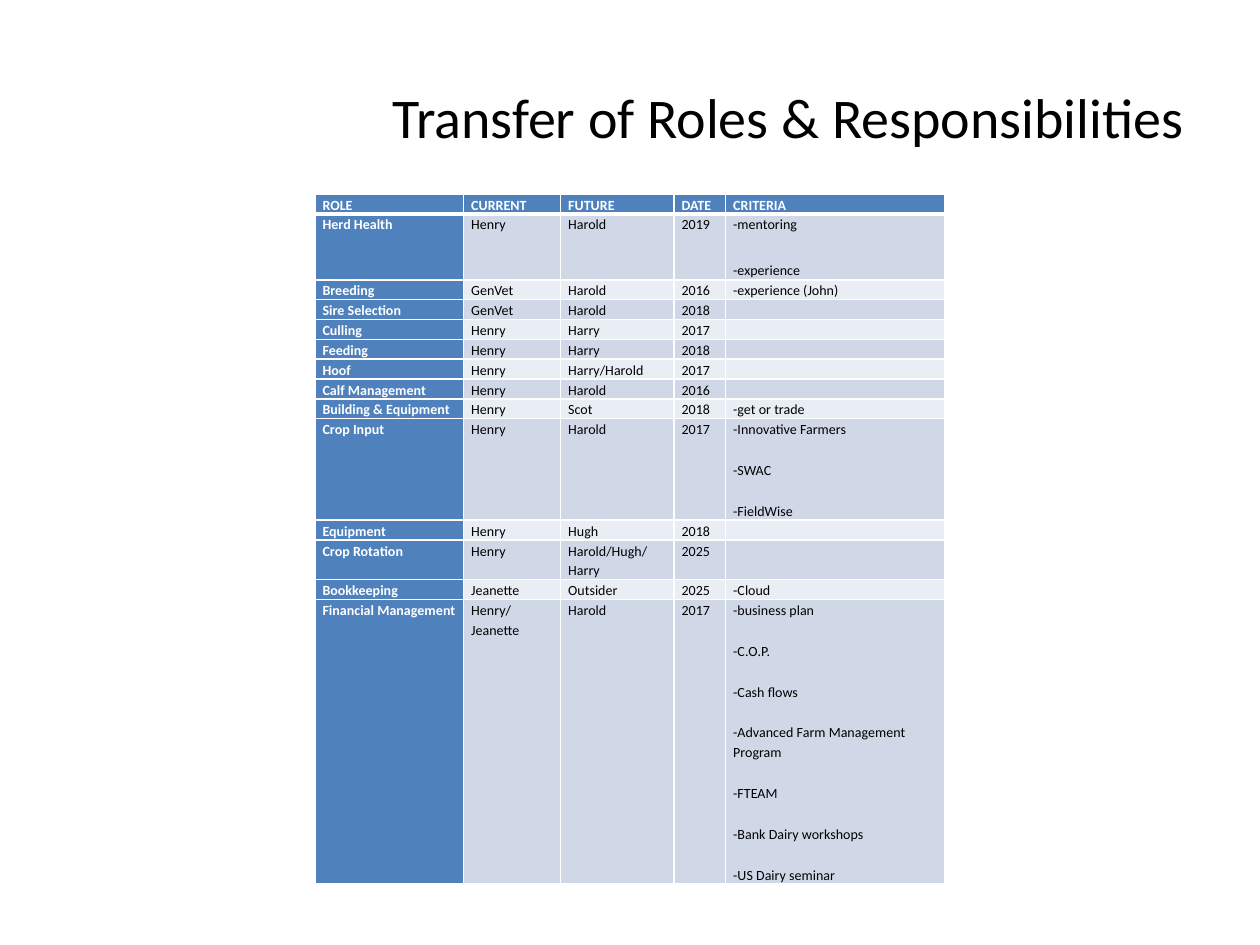
from pptx import Presentation as Deck
from pptx.dml.color import RGBColor as Rgb
from pptx.enum.text import MSO_ANCHOR as Anchor, PP_ALIGN as Align
from pptx.oxml.ns import qn
from pptx.util import Inches, Pt
from lxml.etree import SubElement as Sub

INK = {"head": "4F81BD", "odd": "D0D8E8", "even": "E9EDF4",
       "light": "FFFFFF", "dark": "000000"}

COLS = [1.18, 0.77, 0.9, 0.41, 1.74]
LINE = 0.15
TALL = {1: 0.47, 9: 0.71, 11: 0.3, 13: 1.98}

ROLES = [
    ("ROLE", "CURRENT", "FUTURE", "DATE", "CRITERIA"),
    ("Herd Health", "Henry", "Harold", "2019", "-mentoring\n-experience"),
    ("Breeding", "GenVet", "Harold", "2016", "-experience (John)"),
    ("Sire Selection", "GenVet", "Harold", "2018", ""),
    ("Culling", "Henry", "Harry", "2017", ""),
    ("Feeding", "Henry", "Harry", "2018", ""),
    ("Hoof", "Henry", "Harry/Harold", "2017", ""),
    ("Calf Management", "Henry", "Harold", "2016", ""),
    ("Building & Equipment", "Henry", "Scot", "2018", "-get or trade"),
    ("Crop Input", "Henry", "Harold", "2017",
     "-Innovative Farmers\n-SWAC\n-FieldWise"),
    ("Equipment", "Henry", "Hugh", "2018", ""),
    ("Crop Rotation", "Henry", "Harold/Hugh/Harry", "2025", ""),
    ("Bookkeeping", "Jeanette", "Outsider", "2025", "-Cloud"),
    ("Financial Management", "Henry/Jeanette", "Harold", "2017",
     "-business plan\n-C.O.P.\n-Cash flows\n-Advanced Farm Management Program"
     "\n-FTEAM\n-Bank Dairy workshops\n-US Dairy seminar"),
]


class Page:
    font = "Calibri"
    small = 8

    def __init__(self, deck):
        self.slide = deck.slides.add_slide(deck.slide_layouts[5])
        self.unit = deck.slide_width / 10

    def span(self, size):
        return round(size * self.unit)

    def style(self, run, size, ink, bold=False):
        font = run.font
        font.name, font.size, font.bold = self.font, Pt(size), bold
        font.color.rgb = Rgb.from_string(INK[ink])

    def title(self, text, left, top, width, height):
        box = self.slide.shapes.title
        box.left, box.top = self.span(left), self.span(top)
        box.width, box.height = self.span(width), self.span(height)
        frame = box.text_frame
        frame.text = text
        frame.vertical_anchor = Anchor.MIDDLE
        para = frame.paragraphs[0]
        para.alignment = Align.RIGHT
        self.style(para.runs[0], 32, "dark")

    def edge(self, cell, side, width):
        line = Sub(cell._tc.get_or_add_tcPr(), qn(f"a:ln{side}"), w=str(Pt(width)))
        Sub(Sub(line, qn("a:solidFill")), qn("a:srgbClr"), val=INK["light"])

    def cell(self, cell, text, row, col):
        lead = row == 0 or col == 0
        cell.margin_left = cell.margin_right = self.span(0.06)
        cell.margin_top = cell.margin_bottom = 0
        for side in "LRTB":
            thick = (row, side) in ((0, "B"), (1, "T"))
            self.edge(cell, side, 3 if thick else 1)
        cell.fill.solid()
        shade = "head" if lead else "odd" if row % 2 else "even"
        cell.fill.fore_color.rgb = Rgb.from_string(INK[shade])
        cell.text_frame.text = text
        paras = cell.text_frame.paragraphs
        before, after = (6, 6) if len(paras) > 2 else (5, 10)
        for spot, para in enumerate(paras):
            para.line_spacing = 1.15
            para.space_before = Pt(before if spot else 0)
            para.space_after = Pt(after)
            for run in para.runs:
                self.style(run, self.small, "light" if lead else "dark", lead)
            if not para.runs:
                Sub(para._p, qn("a:endParaRPr"), sz=str(self.small * 100))

    def table(self, rows, left, top, cols, highs):
        frame = self.slide.shapes.add_table(
            len(rows), len(cols), self.span(left), self.span(top),
            self.span(sum(cols)), self.span(sum(highs)))
        grid = frame.table
        grid.first_col = True
        for col, width in zip(grid.columns, cols):
            col.width = self.span(width)
        for row, height in zip(grid.rows, highs):
            row.height = self.span(height)
        for row, texts in enumerate(rows):
            for col, text in enumerate(texts):
                self.cell(grid.cell(row, col), text, row, col)


def main():
    deck = Deck()
    deck.slide_width, deck.slide_height = Inches(10), Inches(7.5)
    page = Page(deck)
    page.title("Transfer of Roles & Responsibilities", 0.5, 0.3, 9, 1.25)
    highs = [TALL.get(row, LINE) for row in range(len(ROLES))]
    page.table(ROLES, 2.5, 1.54, COLS, highs)
    deck.save("out.pptx")


if __name__ == "__main__":
    main()
